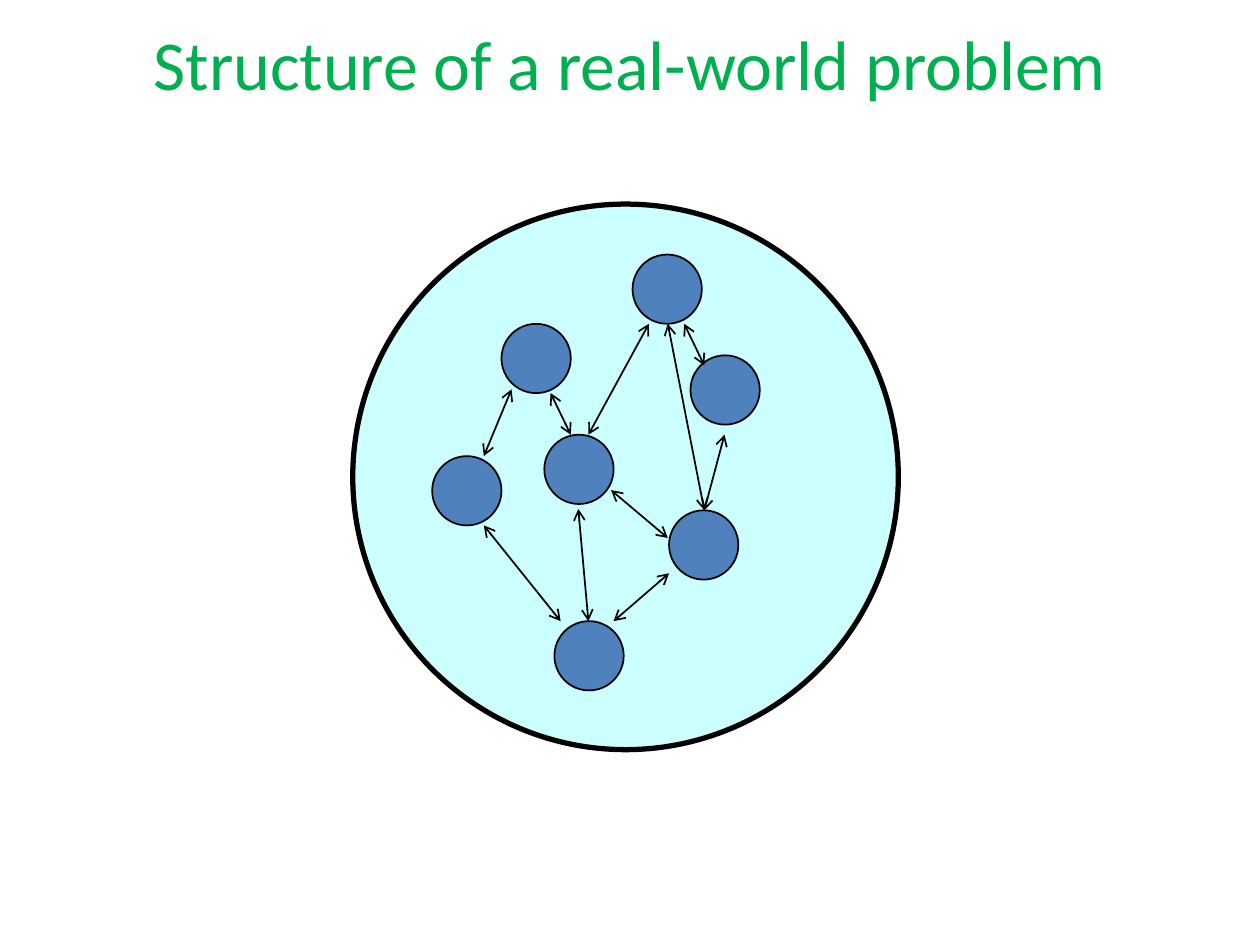
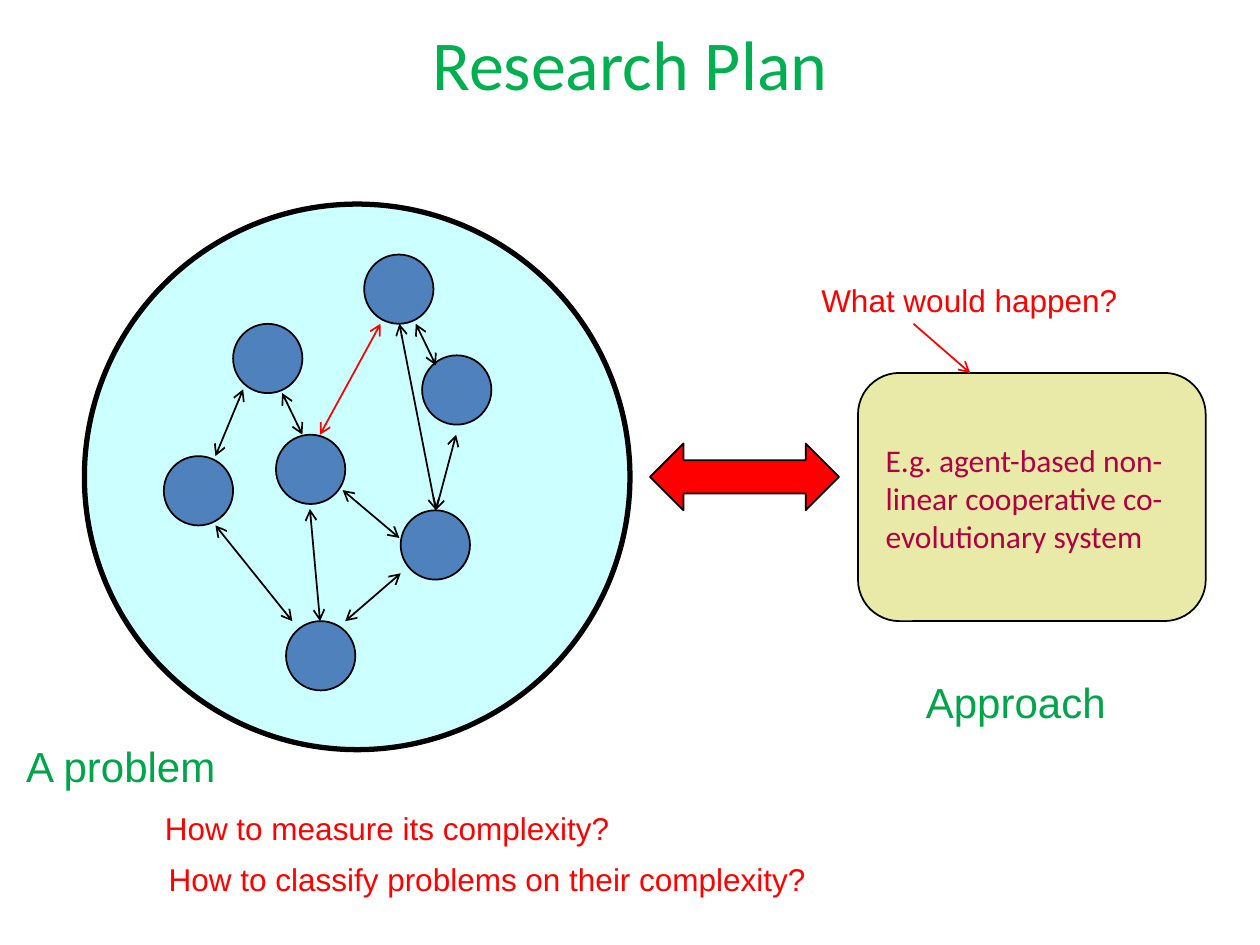
from lxml import etree
from pptx import Presentation
from pptx.dml.color import RGBColor
from pptx.enum.shapes import MSO_CONNECTOR, MSO_SHAPE
from pptx.enum.text import MSO_ANCHOR, MSO_AUTO_SIZE, PP_ALIGN
from pptx.oxml.ns import qn
from pptx.util import Inches, Pt

OVAL = MSO_SHAPE.OVAL
ROUNDED = MSO_SHAPE.ROUNDED_RECTANGLE
DOUBLE_ARROW = MSO_SHAPE.LEFT_RIGHT_ARROW
STRAIGHT = MSO_CONNECTOR.STRAIGHT
TOP, MIDDLE = MSO_ANCHOR.TOP, MSO_ANCHOR.MIDDLE
LEFT, CENTER = PP_ALIGN.LEFT, PP_ALIGN.CENTER
FIT_SHAPE, FIXED = MSO_AUTO_SIZE.SHAPE_TO_FIT_TEXT, MSO_AUTO_SIZE.NONE

BLACK, RED = "000000", "FF0000"
TITLE_GREEN, LABEL_GREEN = "00B050", "00A44A"
PROBLEM_FILL, NODE_FILL = "CCFFFF", "4F81BD"
APPROACH_FILL, APPROACH_TEXT = "EAEAA8", "B10043"

PROBLEM_SIZE, NODE_SIZE = 4.33, 0.55
NODES = {
    "upper left": (1.18, 0.95),
    "bottom": (1.6, 3.31),
    "centre": (1.52, 1.83),
    "left": (0.63, 2.0),
    "lower right": (2.51, 2.43),
    "right": (2.68, 1.2),
    "top": (2.22, 0.4),
}
LINKS = {
    ("upper left", "centre"): ((1.57, 1.5), (1.73, 1.83)),
    ("top", "lower right"): ((2.5, 0.95), (2.79, 2.43)),
    ("right", "lower right"): ((2.95, 1.83), (2.79, 2.43)),
    ("bottom", "lower right"): ((2.07, 3.31), (2.51, 2.93)),
    ("left", "bottom"): ((1.04, 2.55), (1.65, 3.31)),
    ("top", "right"): ((2.63, 0.95), (2.79, 1.28)),
    ("centre", "bottom"): ((1.79, 2.42), (1.87, 3.31)),
    ("upper left", "left"): ((1.26, 1.47), (1.04, 2.0)),
    ("centre", "lower right"): ((2.05, 2.27), (2.5, 2.65)),
    ("top", "centre"): ((2.35, 0.95), (1.87, 1.83)),
}


def color(value):
    """Turn a hex string into a colour."""
    return RGBColor.from_string(value)


def add_text(slide, text, box, size=18, font="Arial", fill=RED, align=LEFT,
             anchor=TOP, wrap=False, auto_size=FIT_SHAPE):
    """Add a text box holding one paragraph."""
    frame = slide.shapes.add_textbox(*map(Inches, box)).text_frame
    frame.word_wrap = wrap
    frame.auto_size = auto_size
    frame.vertical_anchor = anchor
    paragraph = frame.paragraphs[0]
    paragraph.alignment = align
    run = paragraph.add_run()
    run.text = text
    run.font.size = Pt(size)
    run.font.name = font
    run.font.color.rgb = color(fill)


def add_outlined(slide, preset, box, fill, width=1):
    """Add a filled preset shape with a black outline."""
    shape = slide.shapes.add_shape(preset, *map(Inches, box))
    shape.shadow.inherit = False
    shape.fill.solid()
    shape.fill.fore_color.rgb = color(fill)
    shape.line.color.rgb = color(BLACK)
    shape.line.width = Pt(width)


def add_arrow(slide, start, end, stroke=BLACK, ends=("headEnd", "tailEnd")):
    """Add a thin line with open arrowheads at the given ends."""
    connector = slide.shapes.add_connector(STRAIGHT, *map(Inches, (*start, *end)))
    connector.line.color.rgb = color(stroke)
    connector.line.width = Pt(1)
    properties = connector.element.spPr
    line = properties.find(qn("a:ln"))
    for name in ends:
        etree.SubElement(line, qn(f"a:{name}"), type="arrow")
    etree.SubElement(properties, qn("a:effectLst"))


def add_titled_slide(presentation, title):
    """Add a blank slide with the shared title style."""
    slide = presentation.slides.add_slide(presentation.slide_layouts[6])
    add_text(slide, title, (0, 0, 10, 0.99), size=40, font="Calibri",
             fill=TITLE_GREEN, align=CENTER, anchor=MIDDLE, wrap=True,
             auto_size=FIXED)
    return slide


def add_problem(slide, left, top, highlighted=None):
    """Draw the problem circle with its nodes and links."""
    add_outlined(slide, OVAL, (left, top, PROBLEM_SIZE, PROBLEM_SIZE),
                 PROBLEM_FILL, width=3)
    for x, y in NODES.values():
        add_outlined(slide, OVAL, (left + x, top + y, NODE_SIZE, NODE_SIZE),
                     NODE_FILL)
    for pair, points in LINKS.items():
        start, end = ((left + x, top + y) for x, y in points)
        add_arrow(slide, start, end, RED if pair == highlighted else BLACK)


def add_approach(slide, left, top):
    """Draw the approach box with its question and label."""
    add_outlined(slide, ROUNDED, (left, top, 2.76, 1.97), APPROACH_FILL)
    add_text(slide, "E.g. agent-based non-linear cooperative co-evolutionary system",
             (left + 0.12, top + 0.49, 2.52, 1.01), font="Calibri",
             fill=APPROACH_TEXT, wrap=True)
    add_text(slide, "What would happen?", (left - 0.39, top - 0.78, 2.57, 0.4))
    add_arrow(slide, (left + 0.44, top - 0.39), (left + 0.89, top), RED,
              ends=("tailEnd",))
    add_text(slide, "Approach", (left + 0.44, top + 2.36, 1.64, 0.5), size=24,
             fill=LABEL_GREEN)


def add_questions(slide, left, top):
    """Write the problem label and the questions below it."""
    add_text(slide, "A problem", (left, top, 1.72, 0.5), size=24, fill=LABEL_GREEN)
    add_text(slide, "How to measure its complexity?",
             (left + 1.1, top + 0.54, 3.76, 0.4))
    add_text(slide, "How to classify problems on their complexity?",
             (left + 1.13, top + 0.95, 5.31, 0.4))


def build_structure_slide(presentation):
    """Build the slide on the structure of a problem."""
    slide = add_titled_slide(presentation, "Structure of a real-world problem")
    add_problem(slide, 2.8, 1.62)


def build_plan_slide(presentation):
    """Build the slide linking the problem to an approach."""
    slide = add_titled_slide(presentation, "Research Plan")
    add_problem(slide, 0.67, 1.62, highlighted=("top", "centre"))
    add_outlined(slide, DOUBLE_ARROW, (5.16, 3.52, 1.5, 0.53), RED)
    add_approach(slide, 6.81, 2.96)
    add_questions(slide, 0.11, 5.83)


def main():
    """Build and save the presentation."""
    presentation = Presentation()
    presentation.slide_width = Inches(10)
    presentation.slide_height = Inches(7.5)
    build_structure_slide(presentation)
    build_plan_slide(presentation)
    presentation.save("out.pptx")


if __name__ == "__main__":
    main()
